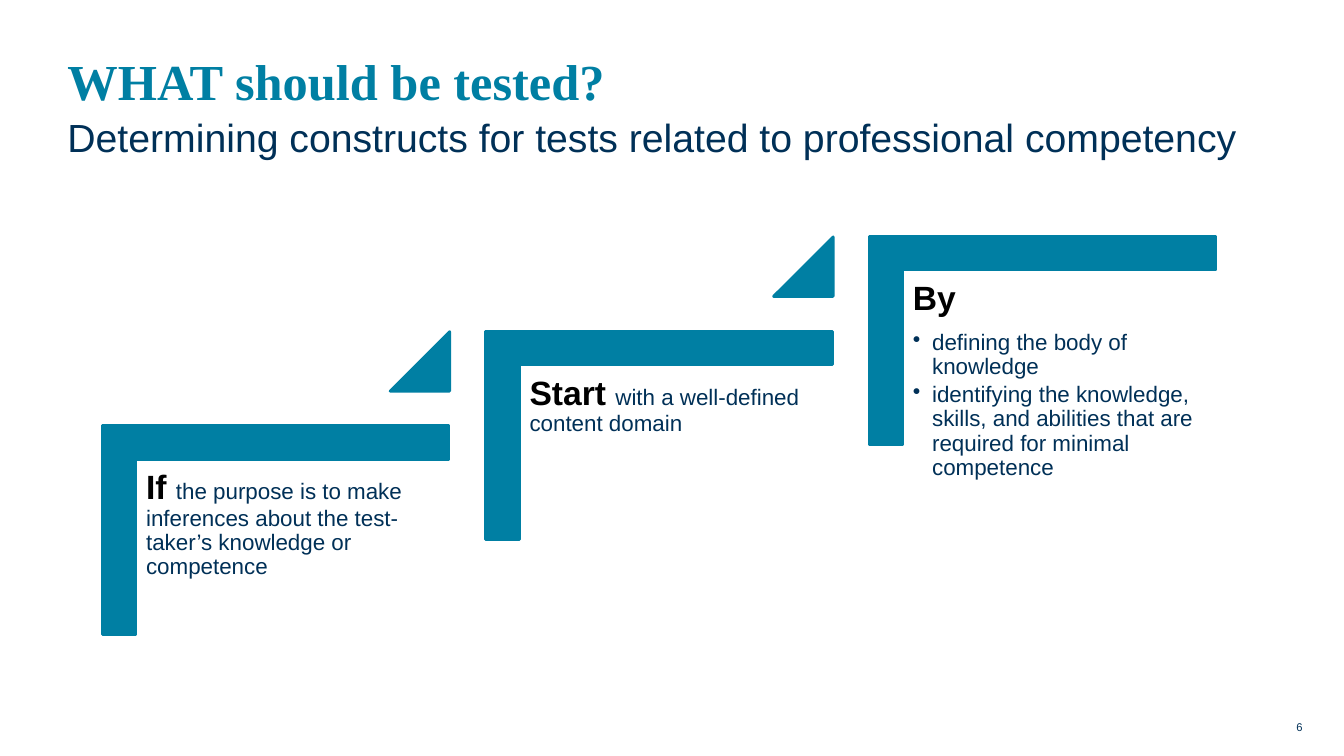
"""Build the slide on what a professional competency test should cover."""
from dataclasses import dataclass

from lxml.etree import SubElement
from pptx import Presentation
from pptx.dml.color import RGBColor
from pptx.enum.shapes import MSO_SHAPE
from pptx.enum.text import MSO_ANCHOR
from pptx.oxml.ns import qn
from pptx.slide import Slide
from pptx.util import Inches, Pt

WIDTH, HEIGHT = Inches(13.33), Inches(7.5)


@dataclass(frozen=True)
class Theme:
    teal: RGBColor = RGBColor(0x00, 0x7F, 0xA3)
    navy: RGBColor = RGBColor(0x00, 0x30, 0x57)
    black: RGBColor = RGBColor(0x00, 0x00, 0x00)
    serif: str = "Times New Roman"
    sans: str = "Arial"
    title: int = 36
    subtitle: int = 28
    lead: int = 24
    body: int = 16
    number: int = 8
    outline: int = 2


@dataclass(frozen=True)
class Box:
    """A rectangle in hundredths of the slide's width and height."""
    left: float
    top: float
    width: float
    height: float

    def moved(self, columns: float, rows: float) -> "Box":
        return Box(self.left + columns, self.top + rows, self.width, self.height)

    def lengths(self) -> tuple[int, int, int, int]:
        return (int(self.left * WIDTH / 100), int(self.top * HEIGHT / 100),
                int(self.width * WIDTH / 100), int(self.height * HEIGHT / 100))


@dataclass(frozen=True)
class Style:
    size: int
    color: RGBColor
    font: str = Theme.sans
    bold: bool = False


@dataclass(frozen=True)
class Line:
    runs: tuple[tuple[str, Style], ...]
    bullet: bool = False
    spacing: float = 1.0
    after: float = 0


@dataclass(frozen=True)
class Label:
    box: Box
    text: str
    style: Style
    top_inset: float = 0.05
    anchor: MSO_ANCHOR = MSO_ANCHOR.TOP


@dataclass(frozen=True)
class Step:
    lead: str
    text: str = ""
    bullets: tuple[str, ...] = ()


THEME = Theme()
LEAD = Style(THEME.lead, THEME.black, bold=True)
BODY = Style(THEME.body, THEME.navy)

LABELS = (
    Label(Box(4.28, 5.73, 90.77, 8.4), "WHAT should be tested?",
          Style(THEME.title, THEME.teal, THEME.serif, True), 0.15, MSO_ANCHOR.MIDDLE),
    Label(Box(4.28, 13.6, 90.77, 5.6),
          "Determining constructs for tests related to professional competency",
          Style(THEME.subtitle, THEME.navy), 0.1),
    Label(Box(95.72, 94.67, 2.63, 2.93), "6", Style(THEME.number, THEME.navy)),
)
STEPS = (
    Step("If ", "the purpose is to make inferences about the test-taker’s knowledge or competence"),
    Step("Start ", "with a well-defined content domain"),
    Step("By", bullets=(
        "defining the body of knowledge",
        "identifying the knowledge, skills, and abilities that are required for minimal competence")),
)
STEP_RIGHT, STEP_UP = 28.53, -12.53
CORNER = Box(7.61, 56.33, 25.8, 27.6)
STEP_TEXT = Box(10.13, 60.93, 23.33, 36.27)
TRIANGLE = Box(29.03, 43.87, 4.43, 7.87)


def add_text(slide: Slide, box: Box, lines: list[Line], inset: float = 0.1,
             top_inset: float = 0.1, anchor: MSO_ANCHOR = MSO_ANCHOR.TOP) -> None:
    frame = slide.shapes.add_textbox(*box.lengths()).text_frame
    frame.word_wrap = True
    frame.vertical_anchor = anchor
    frame.margin_left = frame.margin_right = Inches(0.1)
    frame.margin_top, frame.margin_bottom = Inches(top_inset), Inches(inset)
    for index, line in enumerate(lines):
        paragraph = frame.add_paragraph() if index else frame.paragraphs[0]
        if line.bullet:
            paragraph.level = 1
            properties = paragraph._p.get_or_add_pPr()
            properties.set("marL", str(Inches(0.19)))
            properties.set("indent", str(Inches(-0.19)))
            SubElement(properties, qn("a:buChar"), char="•")
        paragraph.line_spacing = line.spacing
        paragraph.space_after = Pt(line.after)
        paragraph.font.name = line.runs[0][1].font
        for text, style in line.runs:
            run = paragraph.add_run()
            run.text = text
            font = paragraph.font if len(line.runs) == 1 else run.font
            font.size = Pt(style.size)
            font.bold = style.bold
            font.color.rgb = style.color


def add_solid(slide: Slide, kind: MSO_SHAPE, lengths: tuple[int, int, int, int],
              adjustments: tuple[float, ...], rotation: float = 0) -> None:
    shape = slide.shapes.add_shape(kind, *lengths)
    shape.rotation = rotation
    shape.shadow.inherit = False
    for index, value in enumerate(adjustments):
        shape.adjustments[index] = value
    shape.fill.solid()
    shape.fill.fore_color.rgb = THEME.teal
    shape.line.color.rgb = THEME.teal
    shape.line.width = Pt(THEME.outline)


def quarter_turned(box: Box) -> tuple[int, int, int, int]:
    """Return the lengths that fill the box after a turn of 90 degrees."""
    left, top, width, height = box.lengths()
    shift = (width - height) // 2
    return left + shift, top - shift, height, width


def add_step(slide: Slide, step: Step, index: int) -> None:
    offset = index * STEP_RIGHT, index * STEP_UP
    add_solid(slide, MSO_SHAPE.CORNER, quarter_turned(CORNER.moved(*offset)),
              (0.161, 0.161), 90)
    opening = ((step.lead, LEAD),) + (((step.text, BODY),) if step.text else ())
    lines = [Line(opening, spacing=0.9, after=9.7)]
    lines += [Line(((text, BODY),), True, 0.9, 2.8) for text in step.bullets]
    add_text(slide, STEP_TEXT.moved(*offset), lines)
    if index < len(STEPS) - 1:
        add_solid(slide, MSO_SHAPE.ISOSCELES_TRIANGLE,
                  TRIANGLE.moved(*offset).lengths(), (1,))


def main() -> None:
    presentation = Presentation()
    presentation.slide_width, presentation.slide_height = WIDTH, HEIGHT
    slide = presentation.slides.add_slide(presentation.slide_layouts[6])
    for label in LABELS:
        add_text(slide, label.box, [Line(((label.text, label.style),))], 0.05,
                 label.top_inset, label.anchor)
    for index, step in enumerate(STEPS):
        add_step(slide, step, index)
    presentation.save("out.pptx")


if __name__ == "__main__":
    main()
